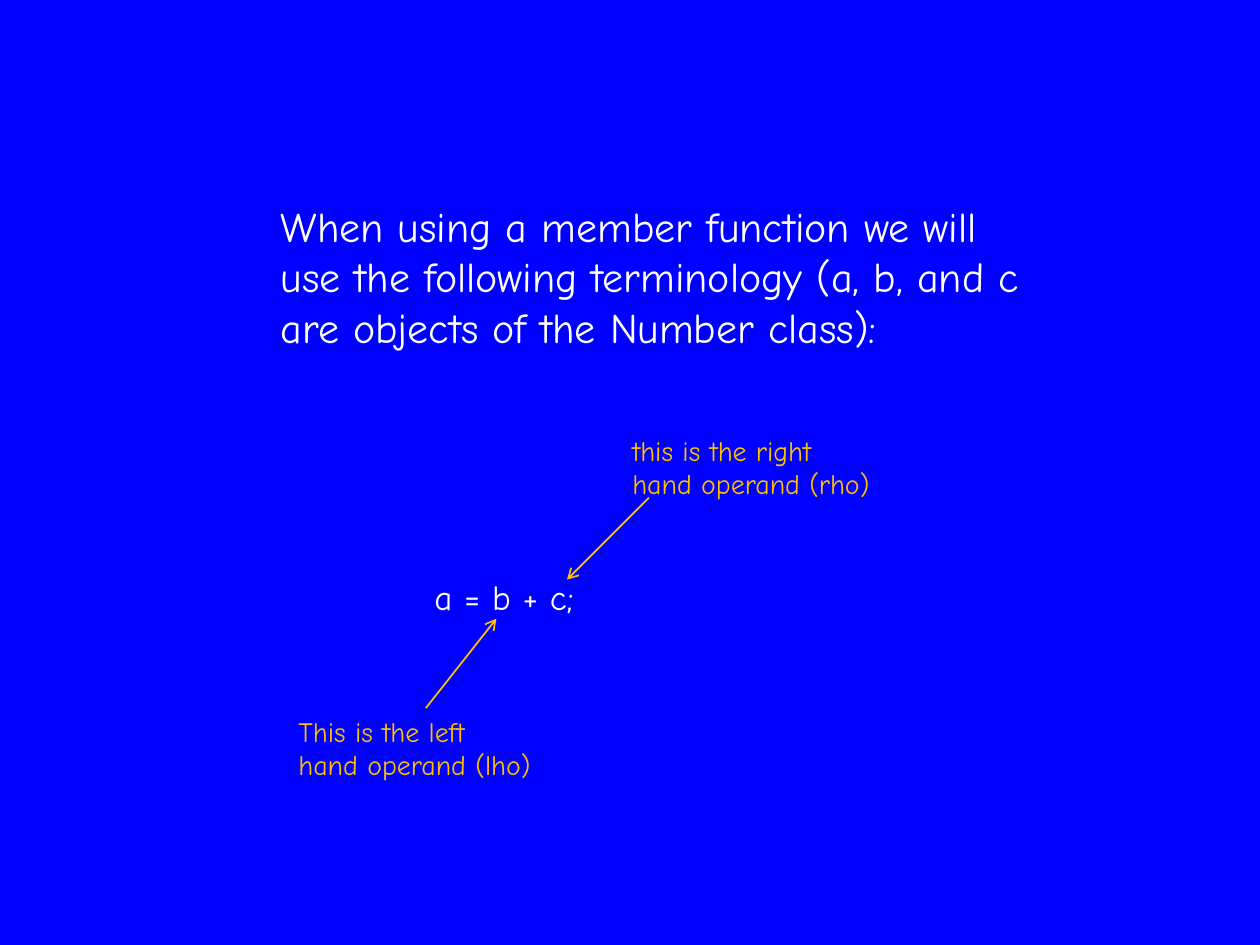
from pptx import Presentation
from pptx.dml.color import RGBColor
from pptx.enum.shapes import MSO_CONNECTOR
from pptx.enum.text import MSO_AUTO_SIZE
from pptx.oxml.ns import qn
from pptx.util import Pt
from lxml import etree


def rgb(value):
    return RGBColor.from_string(value)


prs = Presentation()
prs.slide_width, prs.slide_height = Pt(720), Pt(540)
s = prs.slides.add_slide(prs.slide_layouts[6])

# Background
s.background.fill.solid()
s.background.fill.fore_color.rgb = rgb("0000FF")

# Introduction, operand labels and expression: lines, box, size, colour
texts = [
    (["When using a member function we will",
      "use the following terminology (a, b, and c",
      "are objects of the Number class):"],
     (153.36, 110.88, 483.12, 94.32), 24, "FFFFFF"),
    (["this is the right", "hand operand (rho)"],
     (354.24, 244.08, 156.96, 46.08), 16, "FFC000"),
    (["This is the left", "hand operand (lho)"],
     (163.44, 404.64, 158.4, 46.08), 16, "FFC000"),
    (["a = b + c;"], (241.2, 325.44, 97.92, 31.68), 20, "FFFFFF"),
]
for lines, box, size, color in texts:
    tf = s.shapes.add_textbox(*map(Pt, box)).text_frame
    tf.word_wrap = True
    tf.auto_size = MSO_AUTO_SIZE.SHAPE_TO_FIT_TEXT
    tf.text = "\n".join(lines)
    for p in tf.paragraphs:
        r = p.runs[0]
        for name, value in {"name": "Comic Neue", "size": Pt(size)}.items():
            setattr(r.font, name, value)
        r.font.color.rgb = rgb(color)

# Arrows from the labels to their operands
for ends in [(370.8, 284.4, 324, 331.2), (243.36, 404.64, 283.68, 353.52)]:
    arrow = s.shapes.add_connector(MSO_CONNECTOR.STRAIGHT, *map(Pt, ends))
    arrow.line.width = Pt(1)
    arrow.line.color.rgb = rgb("FFC000")
    etree.SubElement(arrow.line._get_or_add_ln(), qn("a:tailEnd"), type="arrow")
    etree.SubElement(arrow._element.spPr, qn("a:effectLst"))

prs.save("out.pptx")
